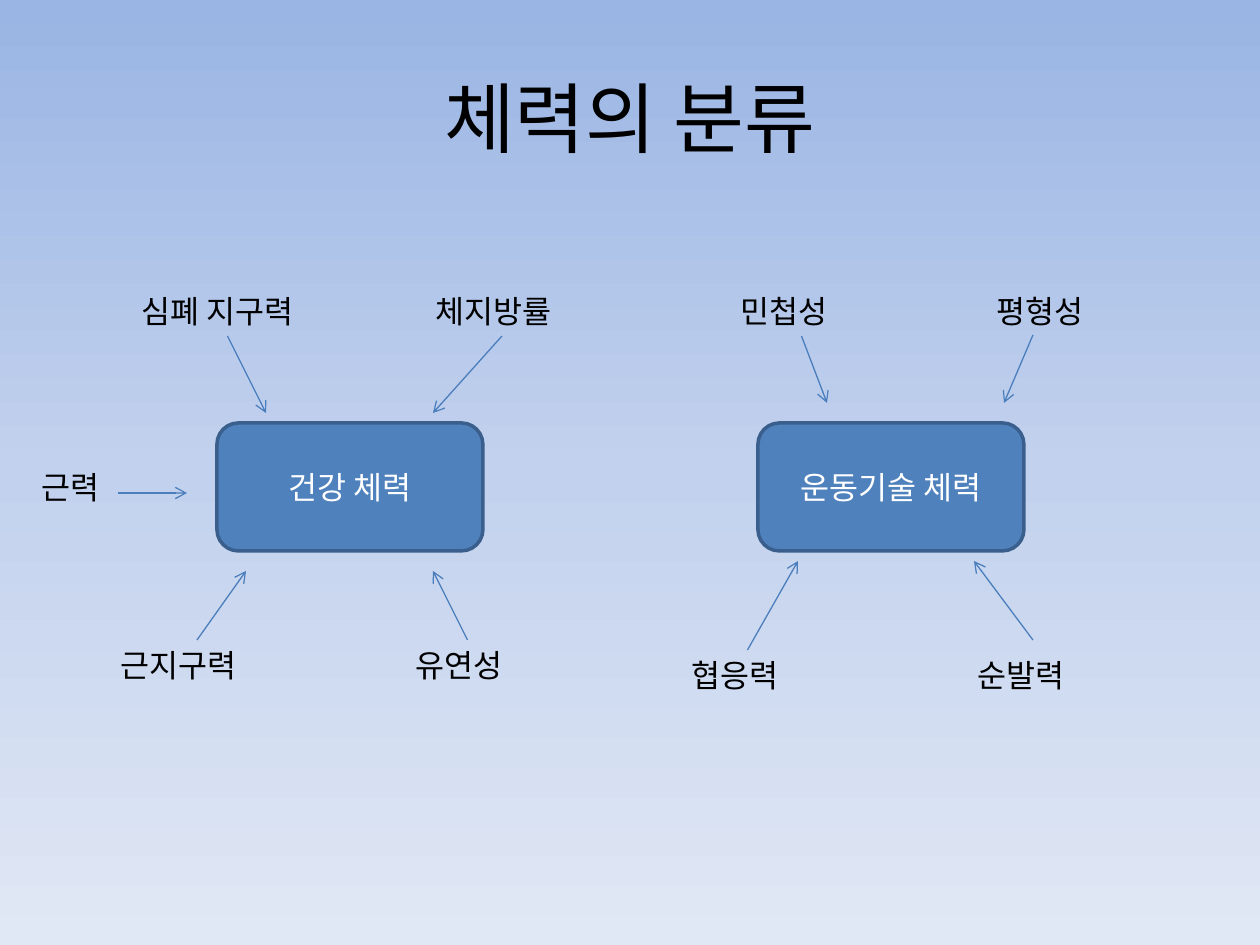
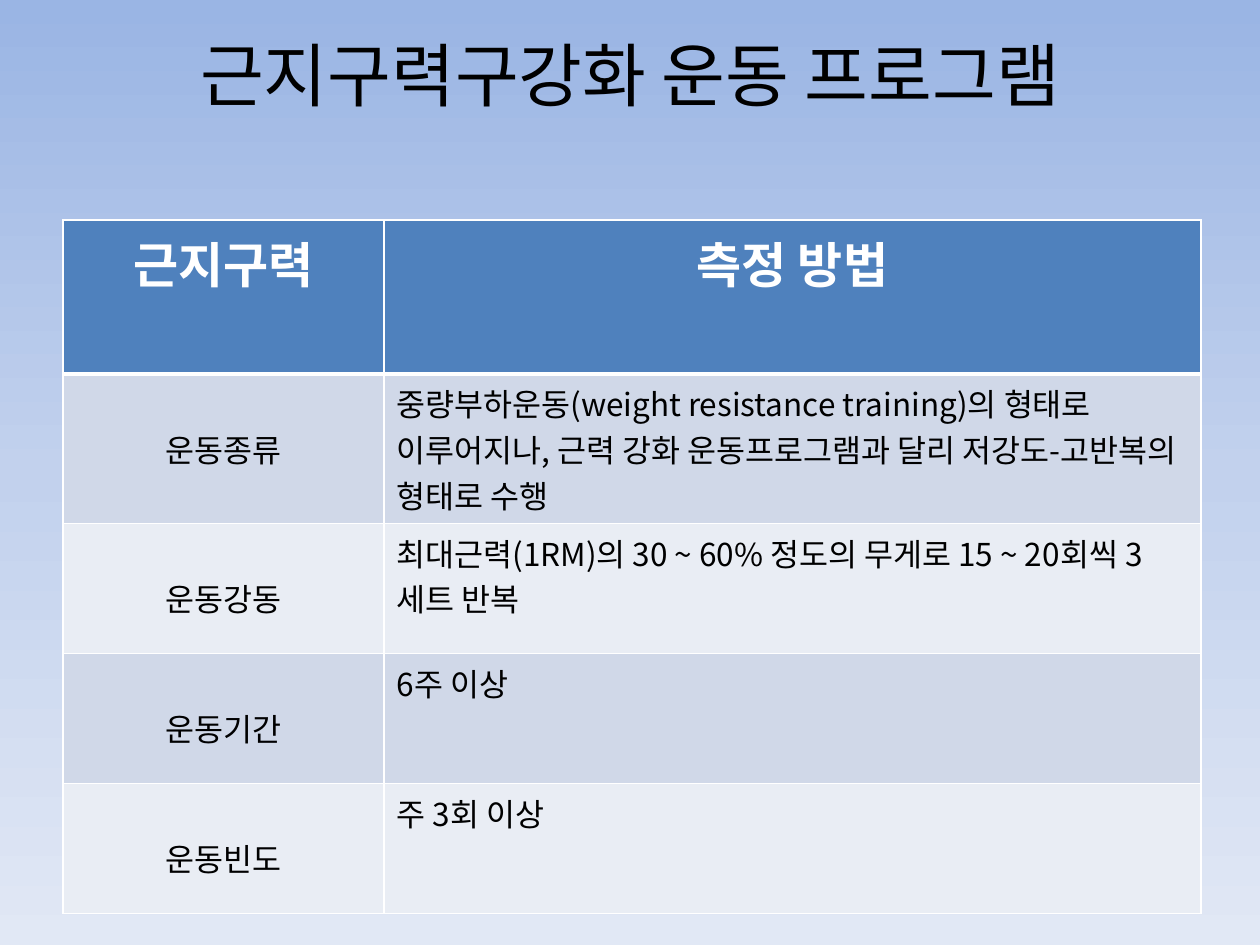
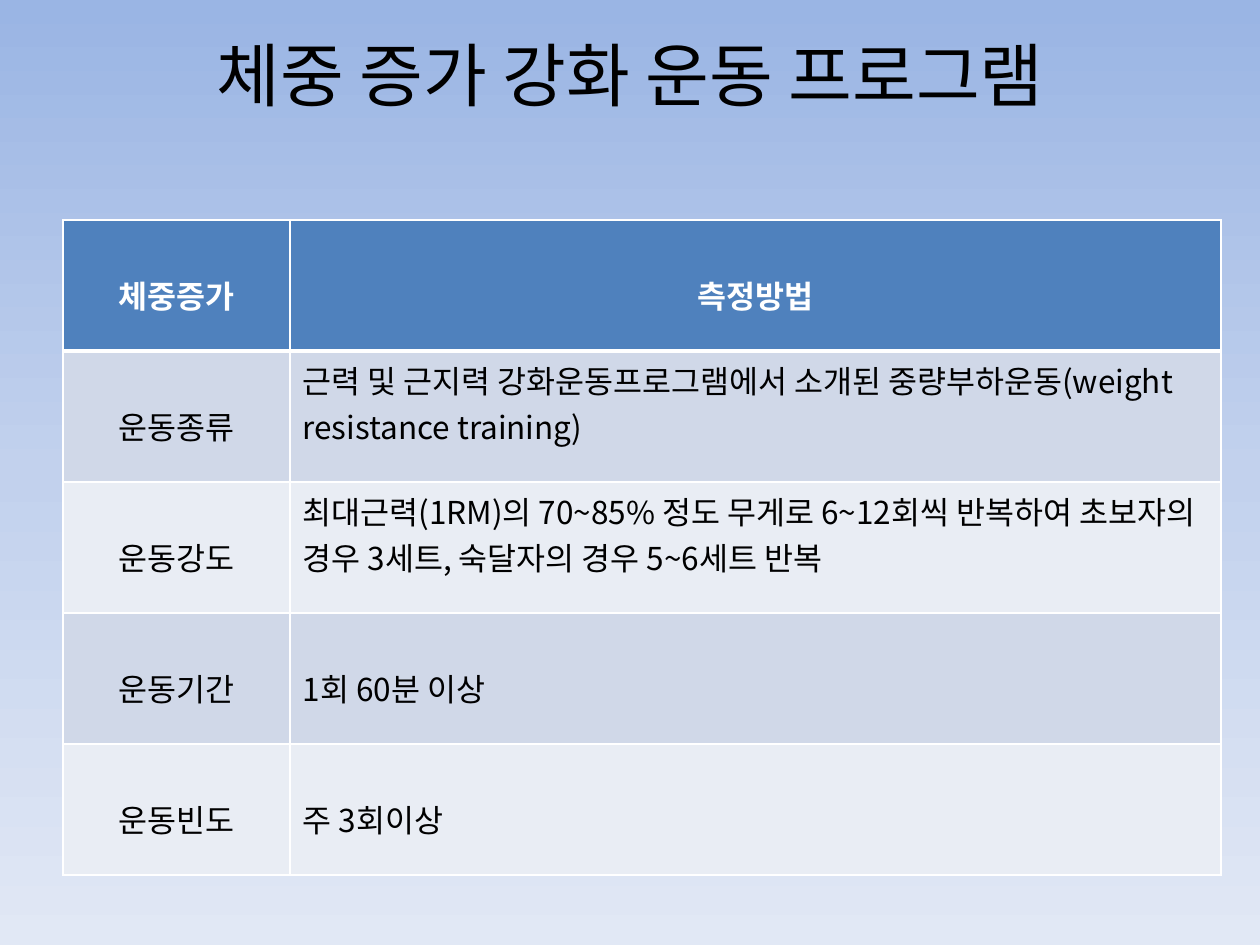
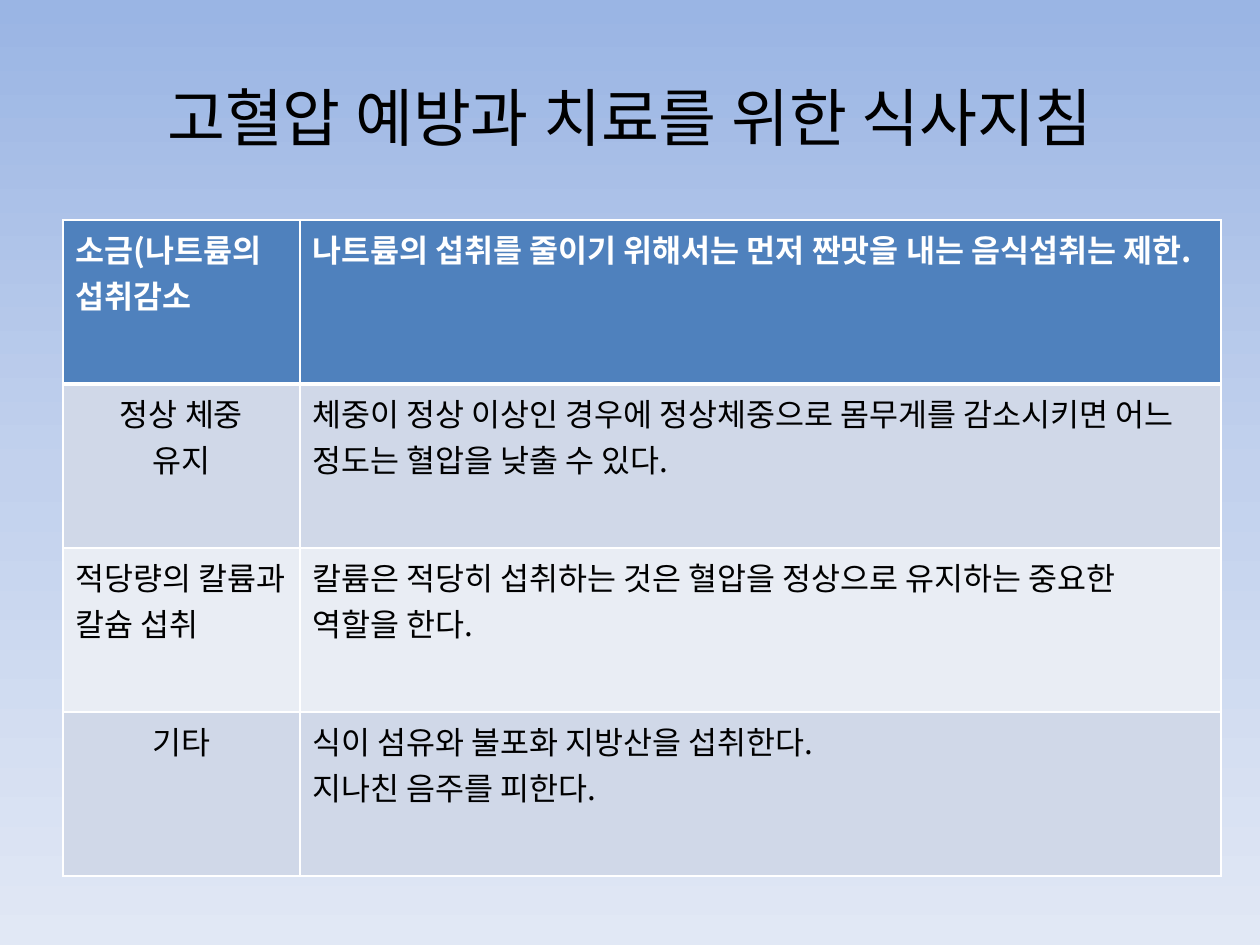
"""Build four slides on kinds of fitness, exercise programmes and diet guidance."""
from copy import deepcopy

from lxml.etree import SubElement
from pptx import Presentation
from pptx.dml.color import RGBColor
from pptx.enum.shapes import MSO_CONNECTOR, MSO_SHAPE
from pptx.enum.text import MSO_ANCHOR as Anchor, MSO_AUTO_SIZE as AutoSize, PP_ALIGN as Align
from pptx.oxml.ns import qn
from pptx.util import Emu, Pt

FONT = "Noto Sans CJK KR"
BLUE, DARK_BLUE, ARROW_BLUE = "4F81BD", "3A5F8C", "4B7EBC"
BLACK, WHITE = "000000", "FFFFFF"
BANDS = ["E9EDF4", "D0D8E8"]
BACKGROUND = [(0, "9AB5E4"), (0.5, "C2D1ED"), (1, "E1E8F5")]
TITLE_BOX = (63, 38, 1134, 157)
BOTTOM, TOP = 2, 0


def px(*lengths):
    return [Emu(round(length * 914400 / 126)) for length in lengths]


def format_text(text_frame, size, colour=BLACK, align=Align.LEFT, bold=False):
    for paragraph in text_frame.paragraphs:
        paragraph.alignment = align
        for run in paragraph.runs:
            run.font.size = Pt(size)
            run.font.bold = bold
            run.font.color.rgb = RGBColor.from_string(colour)
            run.font.name = FONT
            east_asian = deepcopy(run.font._element.find(qn("a:latin")))
            east_asian.tag = qn("a:ea")
            run.font._element.find(qn("a:latin")).addnext(east_asian)


presentation = Presentation()
presentation.slide_width, presentation.slide_height = px(1260, 945)

master = presentation.slide_master
background_fill = master.background.fill
background_fill.gradient()
background_fill.gradient_angle = 270
stop_list = master._element.xpath(".//p:bg//a:gsLst")[0]
stop_list.append(deepcopy(stop_list[0]))
for stop, (position, colour) in zip(background_fill.gradient_stops, BACKGROUND):
    stop.position = position
    stop.color.rgb = RGBColor.from_string(colour)

titles = [
    ("체력의 분류", 44, 6),
    ("근지구력구강화 운동 프로그램", 39.6, 92),
    ("체중 증가 강화 운동 프로그램", 39.6, 92),
    ("고혈압 예방과 치료를 위한 식사지침", 36, 6),
]
for text, size, bottom_margin in titles:
    slide = presentation.slides.add_slide(presentation.slide_layouts[5])
    title = slide.shapes.title
    title.left, title.top, title.width, title.height = px(*TITLE_BOX)
    title.text_frame.text = text
    title.text_frame.auto_size = AutoSize.NONE
    title.text_frame.vertical_anchor = Anchor.MIDDLE
    title.text_frame.margin_bottom = px(bottom_margin)[0]
    format_text(title.text_frame, size, align=Align.CENTER)

shapes = presentation.slides[0].shapes
for text, left in [("건강 체력", 217), ("운동기술 체력", 758)]:
    box = shapes.add_shape(MSO_SHAPE.ROUNDED_RECTANGLE, *px(left, 423, 266, 128))
    box.shadow.inherit = False
    box.fill.solid()
    box.fill.fore_color.rgb = RGBColor.from_string(BLUE)
    box.line.color.rgb = RGBColor.from_string(DARK_BLUE)
    box.line.width = Pt(2)
    box.text_frame.text = text
    box.text_frame.vertical_anchor = Anchor.MIDDLE
    format_text(box.text_frame, 18, WHITE, Align.CENTER)

factors = [
    ("심폐 지구력", (129, 286, 197), BOTTOM, (227, 336), (266, 413)),
    ("근력", (29, 462, 129), None, (118, 493), (187, 493)),
    ("체지방률", (423, 286, 158), BOTTOM, (502, 336), (433, 413)),
    ("유연성", (403, 640, 129), TOP, (467, 640), (433, 571)),
    ("근지구력", (108, 640, 178), TOP, (197, 640), (246, 571)),
    ("민첩성", (728, 286, 147), BOTTOM, (802, 336), (827, 403)),
    ("평형성", (984, 286, 137), None, (1033, 335), (1004, 403)),
    ("협응력", (679, 650, 137), TOP, (748, 650), (798, 561)),
    ("순발력", (965, 650, 137), None, (1033, 640), (974, 561)),
]
for text, place, side, start, end in factors:
    label = shapes.add_textbox(*px(*place, 50))
    label.text_frame.word_wrap = True
    label.text_frame.text = text
    format_text(label.text_frame, 18)
    arrow = shapes.add_connector(MSO_CONNECTOR.STRAIGHT, *px(*start, *end))
    if side is not None:
        arrow.begin_connect(label, side)
    arrow.line.color.rgb = RGBColor.from_string(ARROW_BLUE)
    arrow.line.width = Pt(0.75)
    properties = arrow._element.spPr
    SubElement(properties.find(qn("a:ln")), qn("a:tailEnd"), type="arrow")
    SubElement(properties, qn("a:effectLst"))

label_cells = {(row, 0) for row in range(1, 5)}
header_cells = {(0, 0), (0, 1)}
tables = [
    {
        "columns": [321, 817],
        "rows": [154, 130, 130, 130, 130],
        "header_size": 28,
        "centred": label_cells | header_cells,
        "lowered": label_cells,
        "text": [
            ("근지구력", "측정 방법"),
            ("운동종류", "중량부하운동(weight resistance training)의 형태로 이루어지나, "
                     "근력 강화 운동프로그램과 달리 저강도-고반복의 형태로 수행"),
            ("운동강동", "최대근력(1RM)의 30 ~ 60% 정도의 무게로 15 ~ 20회씩 3세트 반복"),
            ("운동기간", "6주 이상"),
            ("운동빈도", "주 3회 이상"),
        ],
    },
    {
        "columns": [227, 931],
        "rows": [131] * 5,
        "header_size": 18,
        "centred": label_cells | header_cells,
        "lowered": label_cells | header_cells | {(3, 1), (4, 1)},
        "text": [
            ("체중증가", "측정방법"),
            ("운동종류", "근력 및 근지력 강화운동프로그램에서 소개된 "
                     "중량부하운동(weight resistance training)"),
            ("운동강도", "최대근력(1RM)의 70~85% 정도 무게로 6~12회씩 반복하여 "
                     "초보자의 경우 3세트, 숙달자의 경우 5~6세트 반복"),
            ("운동기간", "1회 60분 이상"),
            ("운동빈도", "주 3회이상"),
        ],
    },
    {
        "columns": [237, 921],
        "rows": [164] * 4,
        "header_size": 18,
        "centred": {(1, 0), (3, 0)},
        "lowered": set(),
        "text": [
            ("소금(나트륨의 섭취감소",
             "나트륨의 섭취를 줄이기 위해서는 먼저 짠맛을 내는 음식섭취는 제한."),
            ("정상 체중\n유지",
             "체중이 정상 이상인 경우에 정상체중으로 몸무게를 감소시키면 어느 정도는 혈압을 낮출 수 있다."),
            ("적당량의 칼륨과 칼슘 섭취",
             "칼륨은 적당히 섭취하는 것은 혈압을 정상으로 유지하는 중요한 역할을 한다."),
            ("기타", "식이 섬유와 불포화 지방산을 섭취한다.\n지나친 음주를 피한다."),
        ],
    },
]
for slide, content in zip(list(presentation.slides)[1:], tables):
    columns, rows = content["columns"], content["rows"]
    place = px(63, 220, sum(columns), sum(rows))
    table = slide.shapes.add_table(len(rows), len(columns), *place).table
    for column, width in zip(table.columns, px(*columns)):
        column.width = width
    for row, height in zip(table.rows, px(*rows)):
        row.height = height
    for row_index, texts in enumerate(content["text"]):
        is_header = row_index == 0
        for column_index, text in enumerate(texts):
            position = (row_index, column_index)
            cell = table.cell(*position)
            cell.text_frame.text = text
            format_text(
                cell.text_frame,
                content["header_size"] if is_header else 18,
                WHITE if is_header else BLACK,
                Align.CENTER if position in content["centred"] else Align.LEFT,
                is_header,
            )
            if position in content["lowered"]:
                cell.margin_top = px(52)[0]
            cell_properties = cell._tc.get_or_add_tcPr()
            for edge in ("lnL", "lnR", "lnT", "lnB"):
                is_thick = (row_index, edge) in [(0, "lnB"), (1, "lnT")]
                border = SubElement(cell_properties, qn("a:" + edge), w=str(Pt(3 if is_thick else 1)))
                SubElement(SubElement(border, qn("a:solidFill")), qn("a:srgbClr"), val=WHITE)
            cell.fill.solid()
            cell.fill.fore_color.rgb = RGBColor.from_string(BLUE if is_header else BANDS[row_index % 2])

presentation.save("out.pptx")
